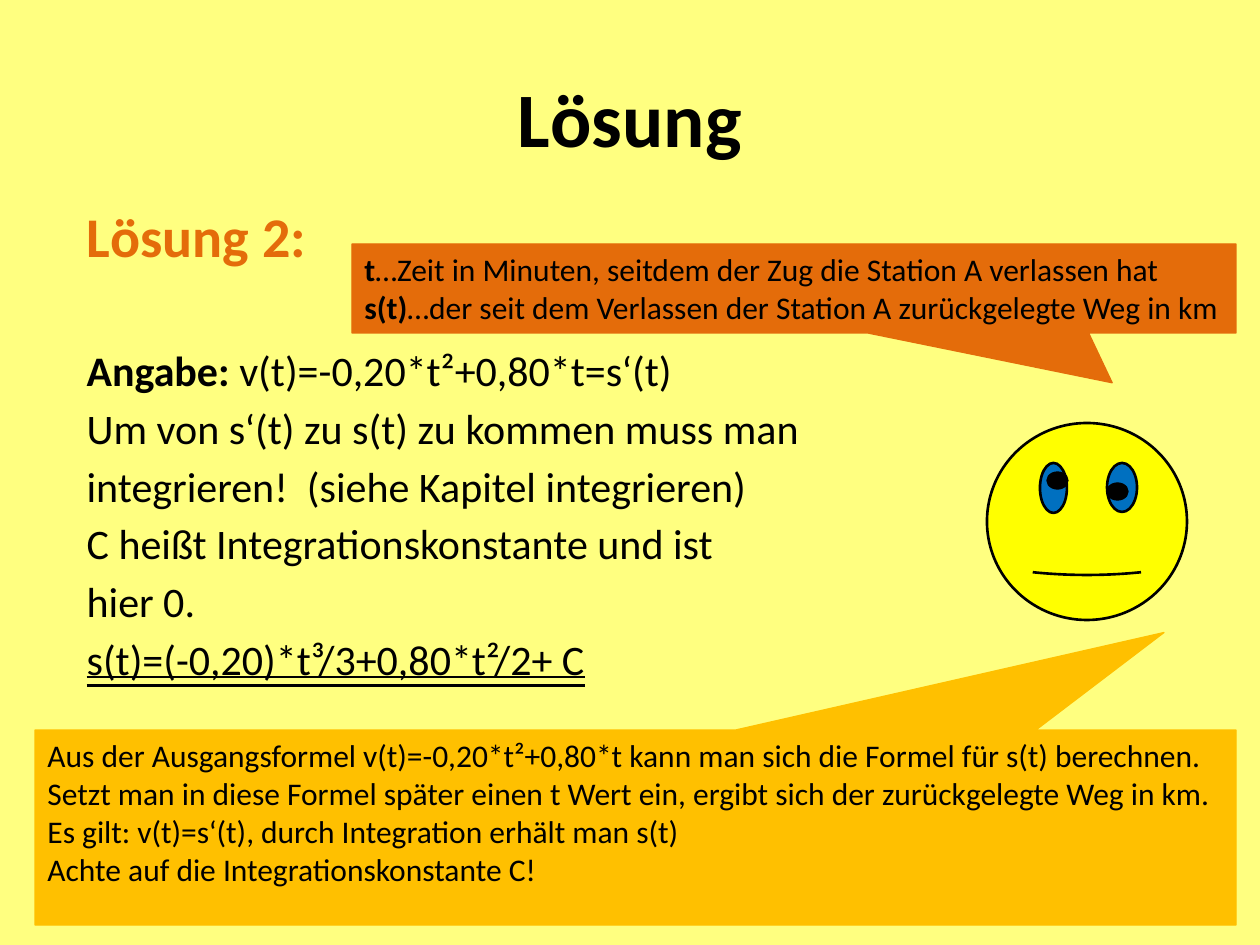
from pptx import Presentation
from pptx.dml.color import RGBColor
from pptx.enum.shapes import MSO_SHAPE as Shape
from pptx.enum.text import MSO_ANCHOR as Anchor, MSO_UNDERLINE as Line, PP_ALIGN as Align
from pptx.util import Emu, Pt
from lxml.etree import SubElement
from pptx.oxml.ns import qn

FONT = "Calibri"
BLACK, ORANGE, GOLD = "000000", "E46C0A", "FFC000"
YELLOW, PALE, BLUE = "FFFF00", "FFFF80", "0070C0"


def px(n):
    return Emu(round(n * 914400 / 126))


def rgb(code):
    return RGBColor.from_string(code)


def place(shape, box):
    shape.left, shape.top, shape.width, shape.height = map(px, box)


def style(para, size, color=BLACK, bold=None, align=Align.LEFT):
    font = para.font
    font.name, font.size, font.bold = FONT, Pt(size), bold
    font.color.rgb = rgb(color)
    para.alignment = align


def write(para, parts):
    """Fill a paragraph from (text, bold) pairs."""
    for text, bold in parts:
        run = para.add_run()
        run.text = text
        if bold:
            run.font.bold = True


def draw(slide, kind, box, fill, line=BLACK, width=1.5):
    shape = slide.shapes.add_shape(kind, *map(px, box))
    shape.shadow.inherit = False
    shape.fill.solid()
    shape.fill.fore_color.rgb = rgb(fill)
    shape.line.color.rgb = rgb(line)
    shape.line.width = Pt(width)
    return shape


def add_title(slide, box, text):
    title = slide.shapes.title
    place(title, box)
    frame = title.text_frame
    frame.text = text
    frame.vertical_anchor = Anchor.MIDDLE
    style(frame.paragraphs[0], 44, bold=True, align=Align.CENTER)


def add_body(slide, box, head, lines):
    body = slide.placeholders[1]
    place(body, box)
    frame = body.text_frame
    frame.text = head
    style(frame.paragraphs[0], 32, ORANGE, True)
    for i, parts in enumerate(lines):
        para = frame.add_paragraph()
        write(para, parts)
        style(para, 24)
        para.space_before = Pt(4.2 if i else 43.5)
    para.font.underline = Line.DOUBLE_LINE
    # Plain lines without bullets
    for para in frame.paragraphs:
        props = para._p.get_or_add_pPr()
        props.set("marL", "0")
        props.set("indent", "0")
        SubElement(props, qn("a:buNone"))
        # The bullet mark has to stand before the font defaults
        props.append(props.find(qn("a:defRPr")))


def add_face(slide, box):
    x, y, w, h = box
    face = draw(slide, Shape.SMILEY_FACE, box, YELLOW)
    face.adjustments[0] = 0.007
    # Eyes, then pupils
    for dx, dy, ew, eh in ((53, 40, 27, 50), (120, 40, 30, 49)):
        draw(slide, Shape.OVAL, (x + dx, y + dy, ew, eh), BLUE)
    for dx, dy in ((60, 49), (120, 60)):
        draw(slide, Shape.OVAL, (x + dx, y + dy, 21, 17), BLACK, width=0.75)


def add_note(slide, box, color, tip, lines):
    note = draw(slide, Shape.RECTANGULAR_CALLOUT, box, color, color, 0.75)
    note.adjustments[0], note.adjustments[1] = tip
    frame = note.text_frame
    frame.word_wrap = True
    frame.vertical_anchor = Anchor.TOP
    for i, parts in enumerate(lines):
        para = frame.add_paragraph() if i else frame.paragraphs[0]
        write(para, parts)
        style(para, 18)


def main():
    deck = Presentation()
    deck.slide_width, deck.slide_height = px(1260), px(945)
    slide = deck.slides.add_slide(deck.slide_layouts[1])
    slide.background.fill.solid()
    slide.background.fill.fore_color.rgb = rgb(PALE)

    add_title(slide, (63, 38, 1134, 158), "Lösung")
    add_body(slide, (74, 195, 1123, 624), "Lösung 2:", [
        [("Angabe: ", True), ("v(t)=-0,20*t²+0,80*t=s‘(t)", False)],
        [("Um von s‘(t) zu s(t) zu kommen muss man", False)],
        [("integrieren!  (siehe Kapitel integrieren)", False)],
        [("C heißt Integrationskonstante und ist", False)],
        [("hier 0.", False)],
        [("s(t)=(-0,20)*t³/3+0,80*t²/2+ C", False)],
    ])
    add_face(slide, (987, 423, 200, 197))
    add_note(slide, (352, 244, 884, 89), ORANGE, (0.36, 1.06), [
        [("t", True),
         ("…Zeit in Minuten, seitdem der Zug die Station A verlassen hat", False)],
        [("s(t)", True),
         ("…der seit dem Verlassen der Station A zurückgelegte Weg in km", False)],
    ])
    add_note(slide, (35, 730, 1201, 195), GOLD, (0.44, -1), [
        [("Aus der Ausgangsformel v(t)=-0,20*t²+0,80*t kann man sich die Formel "
          "für s(t) berechnen. Setzt man in diese Formel später einen t Wert ein, "
          "ergibt sich der zurückgelegte Weg in km.", False)],
        [("Es gilt: v(t)=s‘(t), durch Integration erhält man s(t)", False)],
        [("Achte auf die Integrationskonstante C!", False)],
    ])
    deck.save("out.pptx")


if __name__ == "__main__":
    main()
